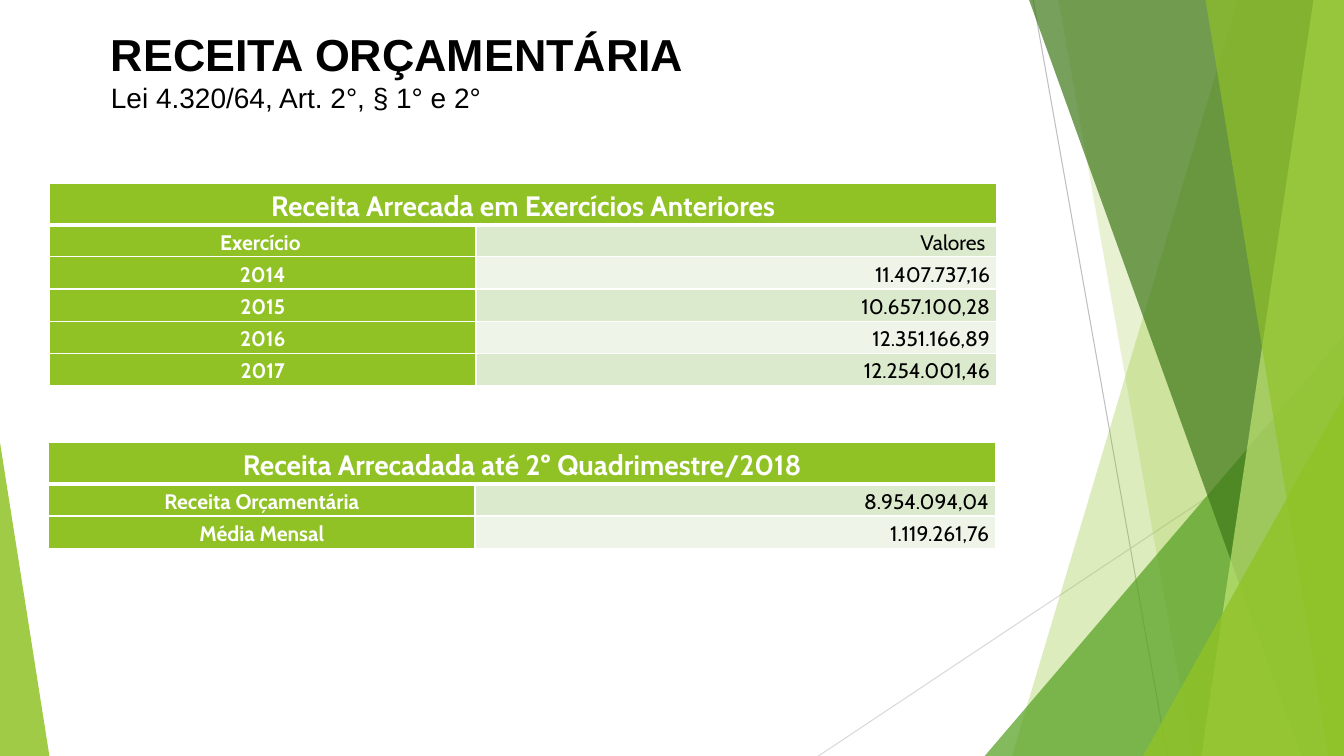
from lxml.etree import SubElement
from pptx import Presentation
from pptx.dml.color import RGBColor
from pptx.enum.shapes import MSO_CONNECTOR, MSO_SHAPE
from pptx.enum.text import MSO_ANCHOR, PP_ALIGN
from pptx.oxml import parse_xml
from pptx.oxml.ns import nsdecls, qn
from pptx.util import Pt

WIDTH, HEIGHT = 960, 540
LIME = RGBColor(0x90, 0xC2, 0x26)
GREEN = RGBColor(0x54, 0xA0, 0x21)
FOREST = RGBColor(0x3F, 0x78, 0x19)
PALE_LIME = RGBColor(0xC0, 0xE4, 0x74)
BANDS = (RGBColor(0xDB, 0xE9, 0xCD), RGBColor(0xEE, 0xF4, 0xE8))
GRAY = RGBColor(0xBF, 0xBF, 0xBF)
LIGHT_GRAY = RGBColor(0xD9, 0xD9, 0xD9)
WHITE = RGBColor(0xFF, 0xFF, 0xFF)
BLACK = RGBColor(0, 0, 0)


def write(paragraph, text, font="Cabin", size=15, color=BLACK, bold=False,
          align=PP_ALIGN.LEFT, spacing=1.0):
    """Add formatted text to a paragraph."""
    paragraph.alignment = align
    paragraph.line_spacing = spacing
    paragraph.space_before = Pt(0)
    run = paragraph.add_run()
    run.text = text
    run.font.name = font
    run.font.size = Pt(size)
    run.font.bold = bold
    run.font.color.rgb = color


class Deck:
    """Hold the style and the current slide, and draw each kind of element."""

    column_widths = (304.6, 372.2)
    header_height = 29.5
    row_height = 23

    def __init__(self):
        """Start a presentation with one title-only slide."""
        self.presentation = Presentation()
        self.presentation.slide_width = Pt(WIDTH)
        self.presentation.slide_height = Pt(HEIGHT)
        self.slide = self.presentation.slides.add_slide(
            self.presentation.slide_layouts[5])

    def title(self, heading, law):
        """Place the heading and the law reference in the title."""
        title = self.slide.shapes.title
        title.left, title.top, title.width, title.height = (
            Pt(79.2), Pt(19), Pt(480), Pt(62))
        frame = title.text_frame
        frame.margin_left = frame.margin_right = 0
        frame.margin_top = frame.margin_bottom = 0
        frame.vertical_anchor = MSO_ANCHOR.TOP
        frame.word_wrap = True
        write(frame.paragraphs[0], heading, font="Arial", size=32, bold=True)
        write(frame.add_paragraph(), law, font="Arial", size=20)

    def line(self, x1, y1, x2, y2, color):
        """Draw a thin straight line."""
        line = self.slide.shapes.add_connector(
            MSO_CONNECTOR.STRAIGHT, Pt(x1), Pt(y1), Pt(x2), Pt(y2))
        line.line.color.rgb = color
        line.line.width = Pt(0.75)
        SubElement(line._element.spPr, qn("a:effectLst"))

    def tint(self, shape, color, opacity):
        """Fill a shape with a translucent colour and no outline."""
        shape.shadow.inherit = False
        shape.line.fill.background()
        shape.fill.solid()
        shape.fill.fore_color.rgb = color
        rgb = shape._element.spPr.find(f"{qn('a:solidFill')}/{qn('a:srgbClr')}")
        SubElement(rgb, qn("a:alpha"), val=str(opacity * 1000))

    def facet(self, top_x, bottom_x, color, opacity):
        """Draw a full-height panel that ends at the right slide edge."""
        builder = self.slide.shapes.build_freeform(Pt(top_x), 0)
        builder.add_line_segments(
            [(Pt(WIDTH), 0), (Pt(WIDTH), Pt(HEIGHT)), (Pt(bottom_x), Pt(HEIGHT))])
        self.tint(builder.convert_to_shape(), color, opacity)

    def triangle(self, left, top, width, apex, color, opacity):
        """Draw a triangle that stands on the bottom slide edge."""
        triangle = self.slide.shapes.add_shape(
            MSO_SHAPE.ISOSCELES_TRIANGLE, Pt(left), Pt(top), Pt(width),
            Pt(HEIGHT - top))
        triangle.adjustments[0] = apex
        self.tint(triangle, color, opacity)

    def cell(self, cell, text, fill, borders, **text_format):
        """Fill, frame and write one table cell."""
        cell.margin_left = cell.margin_right = Pt(5)
        cell.margin_top = cell.margin_bottom = Pt(0.7)
        cell.vertical_anchor = MSO_ANCHOR.MIDDLE
        properties = cell._tc.get_or_add_tcPr()
        for side, width in zip("LRTB", borders):
            properties.append(parse_xml(
                f'<a:ln{side} {nsdecls("a")} w="{Pt(width)}"><a:solidFill>'
                f'<a:srgbClr val="{WHITE}"/></a:solidFill></a:ln{side}>'))
        cell.fill.solid()
        cell.fill.fore_color.rgb = fill
        if text:
            write(cell.text_frame.paragraphs[0], text, spacing=1.15, **text_format)

    def table(self, left, top, heading, rows):
        """Draw a table with a merged heading and label-value rows."""
        height = self.header_height + self.row_height * len(rows)
        table = self.slide.shapes.add_table(
            len(rows) + 1, 2, Pt(left), Pt(top),
            Pt(sum(self.column_widths)), Pt(height)).table
        table.horz_banding = False
        for column, width in zip(table.columns, self.column_widths):
            column.width = Pt(width)
        for row in table.rows:
            row.height = Pt(self.row_height)
        table.rows[0].height = Pt(self.header_height)
        table.cell(0, 0).merge(table.cell(0, 1))
        label_format = dict(color=WHITE, bold=True, align=PP_ALIGN.CENTER)
        for column, text in enumerate((heading, "")):
            self.cell(table.cell(0, column), text, LIME, (1, 1, 1, 3),
                      size=20, **label_format)
        for index, (label, value) in enumerate(rows):
            borders = (1, 1, 1 if index else 3, 1)
            self.cell(table.cell(index + 1, 0), label, LIME, borders,
                      **label_format)
            self.cell(table.cell(index + 1, 1), value, BANDS[index % 2], borders,
                      align=PP_ALIGN.RIGHT)


def main():
    """Build the revenue slide."""
    deck = Deck()
    deck.line(738, 0, 833.8, HEIGHT, GRAY)
    deck.line(WIDTH, 290.2, 584.6, HEIGHT, LIGHT_GRAY)
    deck.facet(884.2, 722.9, LIME, 30)
    deck.facet(756, 851.8, LIME, 20)
    deck.triangle(703.4, 239.8, 256.6, 1, GREEN, 72)
    deck.facet(735.1, 929.5, FOREST, 70)
    deck.facet(938.2, 858.2, PALE_LIME, 70)
    deck.facet(861.1, 949, LIME, 65)
    deck.triangle(816.5, 283, 143.5, 1, LIME, 80)
    deck.triangle(0, 316.1, 35.3, 0, LIME, 85)
    deck.title("RECEITA ORÇAMENTÁRIA", "Lei 4.320/64, Art. 2°, § 1° e 2°")
    deck.table(35.4, 131, "Receita Arrecada em Exercícios Anteriores", [
        ("Exercício ", "Valores "),
        ("2014", "11.407.737,16"),
        ("2015", "10.657.100,28"),
        ("2016", "12.351.166,89"),
        ("2017", "12.254.001,46"),
    ])
    deck.table(34.7, 316.1, "Receita Arrecadada até 2º Quadrimestre/2018", [
        ("Receita Orçamentária", "8.954.094,04"),
        ("Média Mensal", "1.119.261,76"),
    ])
    deck.presentation.save("out.pptx")


if __name__ == "__main__":
    main()
